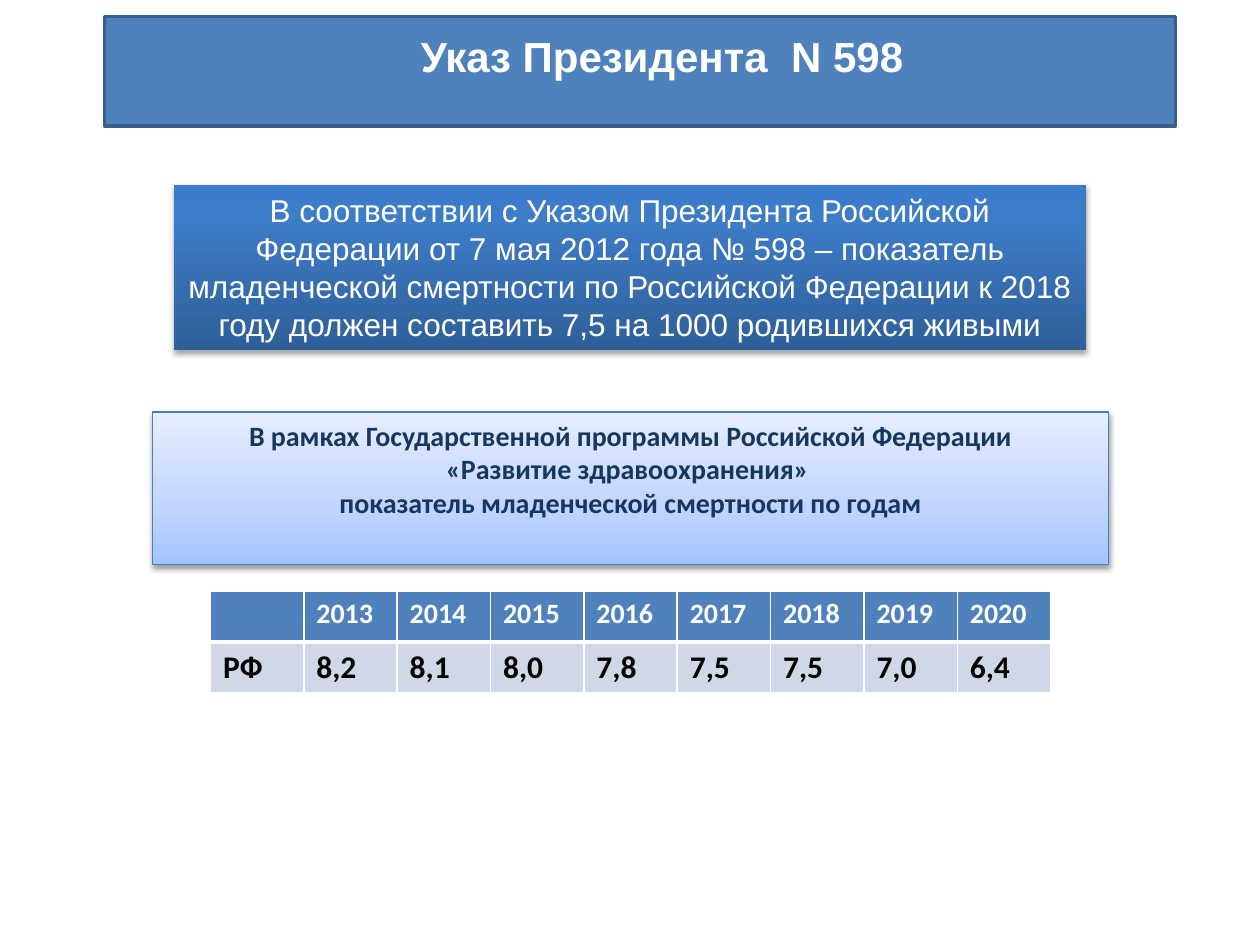
from typing import NamedTuple, Optional

from pptx import Presentation
from pptx.dml.color import RGBColor
from pptx.enum.shapes import MSO_SHAPE
from pptx.enum.text import MSO_ANCHOR, PP_ALIGN
from pptx.oxml.ns import qn
from pptx.util import Inches, Pt
from lxml.etree import SubElement

WHITE = RGBColor(0xFF, 0xFF, 0xFF)
BLACK = RGBColor(0x00, 0x00, 0x00)
BLUE = RGBColor(0x4F, 0x81, 0xBD)
BANNER_EDGE = RGBColor(0x3A, 0x5F, 0x8C)
PROGRAM_EDGE = RGBColor(0x4B, 0x7E, 0xBC)
NAVY = RGBColor(0x17, 0x37, 0x5E)
PALE_BLUE = RGBColor(0xD0, 0xD8, 0xE8)
DECREE_STOPS = (
    (0, RGBColor(0x2F, 0x5F, 0x99)),
    (80, RGBColor(0x3D, 0x7C, 0xC7)),
    (100, RGBColor(0x3A, 0x7C, 0xCB)),
)
PROGRAM_STOPS = (
    (0, RGBColor(0xA4, 0xC4, 0xFF)),
    (35, RGBColor(0xBF, 0xD4, 0xFF)),
    (100, RGBColor(0xE6, 0xEE, 0xFF)),
)


class Box(NamedTuple):
    left: float
    top: float
    width: float
    height: float


class Lettering(NamedTuple):
    font: str
    size: int
    color: RGBColor
    bold: bool = True


class Panel(NamedTuple):
    box: Box
    paragraphs: tuple
    lettering: Lettering
    stops: tuple
    shadow_opacity: int
    shadow_distance: float
    edge: Optional[RGBColor] = None
    wrap: bool = True


class Row(NamedTuple):
    values: tuple
    lettering: Lettering
    fill: RGBColor
    borders: dict


def emu(box: Box) -> list:
    return [Inches(length) for length in box]


def style(paragraph, lettering: Lettering) -> None:
    font = paragraph.font
    font.name = lettering.font
    font.size = Pt(lettering.size)
    font.bold = lettering.bold
    font.color.rgb = lettering.color


def write(frame, paragraphs: tuple, lettering: Lettering, wrap: bool = True) -> None:
    frame.word_wrap = wrap
    frame.vertical_anchor = MSO_ANCHOR.TOP
    for index, text in enumerate(paragraphs):
        paragraph = frame.add_paragraph() if index else frame.paragraphs[0]
        paragraph.text = text
        paragraph.alignment = PP_ALIGN.CENTER
        style(paragraph, lettering)


def add_color(parent, color: RGBColor):
    return SubElement(parent, qn("a:srgbClr"), val=str(color))


def draw_rectangle(slide, box: Box, edge: Optional[RGBColor], weight: float):
    rectangle = slide.shapes.add_shape(MSO_SHAPE.RECTANGLE, *emu(box))
    rectangle.shadow.inherit = False
    if edge is None:
        rectangle.line.fill.background()
    else:
        rectangle.line.color.rgb = edge
        rectangle.line.width = Pt(weight)
    return rectangle


def draw_panel(slide, panel: Panel) -> None:
    rectangle = draw_rectangle(slide, panel.box, panel.edge, 0.75)
    rectangle.fill.gradient()
    rectangle.fill.gradient_angle = 90
    properties = rectangle._element.spPr
    stop_list = properties.find(qn("a:gradFill")).find(qn("a:gsLst"))
    for stop in list(stop_list):
        stop_list.remove(stop)
    for position, color in panel.stops:
        add_color(SubElement(stop_list, qn("a:gs"), pos=str(position * 1000)), color)
    shadow = SubElement(
        properties.find(qn("a:effectLst")), qn("a:outerShdw"),
        blurRad=str(Pt(3.1)), dist=str(Pt(panel.shadow_distance)),
        dir="5400000", rotWithShape="0",
    )
    SubElement(add_color(shadow, BLACK), qn("a:alpha"), val=str(panel.shadow_opacity * 1000))
    write(rectangle.text_frame, panel.paragraphs, panel.lettering, panel.wrap)


def set_borders(cell, borders: dict) -> None:
    properties = cell._tc.get_or_add_tcPr()
    for position, (side, weight) in enumerate(borders.items()):
        border = properties.makeelement(qn(f"a:ln{side}"), {"w": str(Pt(weight))})
        add_color(SubElement(border, qn("a:solidFill")), WHITE)
        properties.insert(position, border)


def draw_table(slide, box: Box, rows: tuple) -> None:
    columns = len(rows[0].values)
    table = slide.shapes.add_table(len(rows), columns, *emu(box)).table
    for row_index, row in enumerate(rows):
        for column_index, value in enumerate(row.values):
            cell = table.cell(row_index, column_index)
            cell.text = value
            style(cell.text_frame.paragraphs[0], row.lettering)
            cell.fill.solid()
            cell.fill.fore_color.rgb = row.fill
            set_borders(cell, row.borders)


DECREE = Panel(
    Box(1.38, 1.47, 7.24, 1.31),
    ("В соответствии с Указом Президента Российской Федерации от 7 мая 2012 года "
     "№ 598 – показатель младенческой смертности по Российской Федерации к 2018 году "
     "должен составить 7,5 на 1000 родившихся живыми",),
    Lettering("Arial", 18, WHITE, False), DECREE_STOPS, 35, 1.8,
)
PROGRAM = Panel(
    Box(1.21, 3.27, 7.59, 1.21),
    ("В рамках Государственной программы Российской Федерации\v«Развитие здравоохранения» ",
     "показатель младенческой смертности по годам"),
    Lettering("Calibri", 16, NAVY), PROGRAM_STOPS, 38, 1.6, PROGRAM_EDGE, False,
)
MORTALITY = (
    Row(("", *(str(year) for year in range(2013, 2021))),
        Lettering("Calibri", 16, WHITE), BLUE, {"L": 1, "R": 1, "T": 1, "B": 3}),
    Row(("РФ", "8,2", "8,1", "8,0", "7,8", "7,5", "7,5", "7,0", "6,4"),
        Lettering("Calibri", 18, BLACK), PALE_BLUE, {"L": 1, "R": 1, "T": 3, "B": 1}),
)


def main() -> None:
    deck = Presentation()
    deck.slide_width, deck.slide_height = Inches(10), Inches(7.5)
    slide = deck.slides.add_slide(deck.slide_layouts[6])

    banner = draw_rectangle(slide, Box(0.83, 0.13, 8.5, 0.87), BANNER_EDGE, 2)
    banner.fill.solid()
    banner.fill.fore_color.rgb = BLUE
    title = slide.shapes.add_textbox(*emu(Box(1.71, 0.19, 7.09, 0.81)))
    write(title.text_frame, ("Указ Президента  N 598",), Lettering("Arial", 24, WHITE))

    for panel in (DECREE, PROGRAM):
        draw_panel(slide, panel)
    draw_table(slide, Box(1.67, 4.69, 6.67, 0.81), MORTALITY)
    deck.save("out.pptx")


if __name__ == "__main__":
    main()
